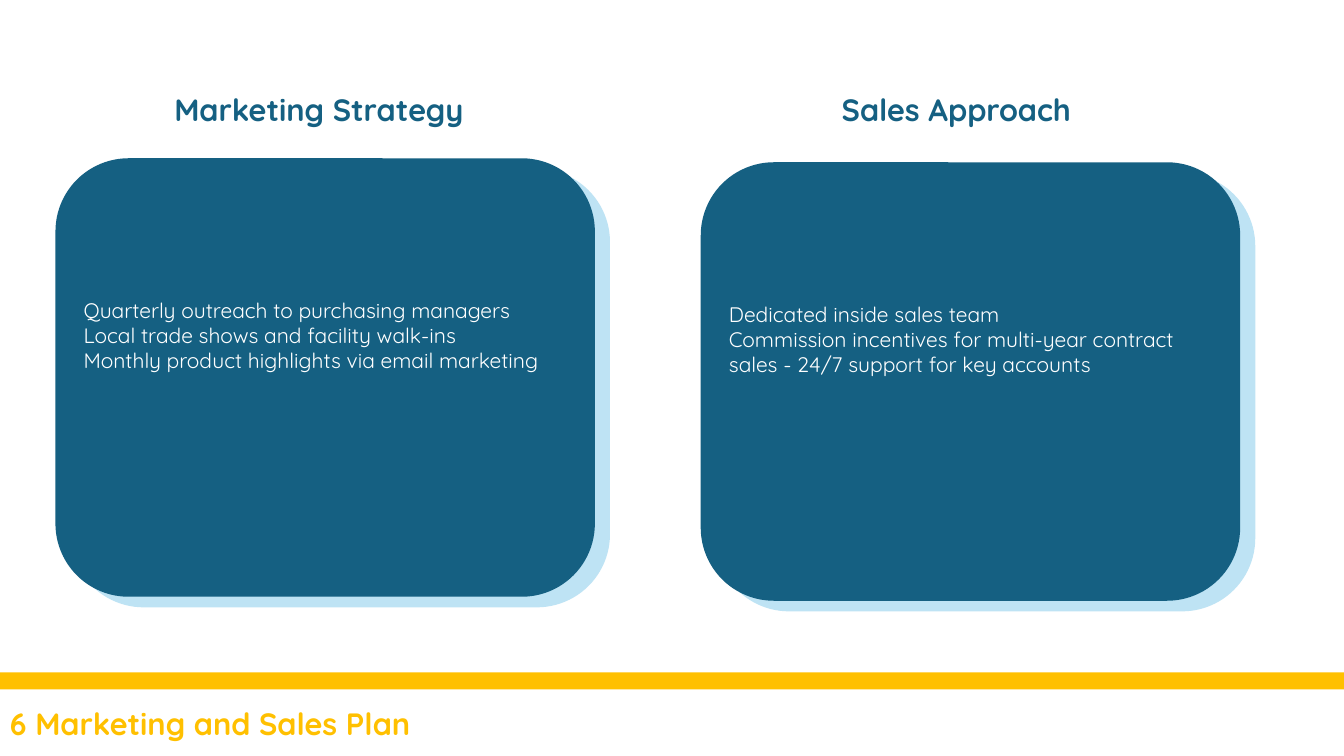
from collections import namedtuple
from dataclasses import dataclass

from pptx import Presentation
from pptx.dml.color import RGBColor
from pptx.enum.shapes import MSO_SHAPE
from pptx.util import Inches, Pt

Box = namedtuple("Box", "left top width height")


@dataclass(frozen=True)
class Theme:
    font: str = "Quicksand"
    blue: str = "156082"
    pale_blue: str = "BEE3F4"
    gold: str = "FFC000"
    white: str = "FFFFFF"
    heading_size: int = 22
    body_size: int = 15


THEME = Theme()
SLIDE = Box(0, 0, 13.33, 7.5)
HEADING_HEIGHT = 0.47


def add_block(page, kind, box, color):
    """Add a flat filled shape without outline."""
    block = page.shapes.add_shape(kind, *map(Inches, box))
    block.shadow.inherit = False
    block.fill.solid()
    block.fill.fore_color.rgb = RGBColor.from_string(color)
    block.line.fill.background()


def add_text(page, box, lines, *, size, color, bold=False):
    """Add a wrapped text box with one paragraph per line."""
    frame = page.shapes.add_textbox(*map(Inches, box)).text_frame
    frame.word_wrap = True
    for index, line in enumerate(lines):
        para = frame.paragraphs[0] if index == 0 else frame.add_paragraph()
        span = para.add_run()
        span.text = line
        span.font.name = THEME.font
        span.font.size = Pt(size)
        span.font.bold = bold
        span.font.color.rgb = RGBColor.from_string(color)


def add_card(page, box, lines, text_width):
    """Place a rounded card, its offset backing and its body text."""
    backing = box._replace(left=box.left + 0.15, top=box.top + 0.105)
    add_block(page, MSO_SHAPE.ROUNDED_RECTANGLE, backing, THEME.pale_blue)
    add_block(page, MSO_SHAPE.ROUNDED_RECTANGLE, box, THEME.blue)
    body = Box(box.left + 0.18, box.top + 1.33, text_width, 1.36)
    add_text(page, body, lines, size=THEME.body_size, color=THEME.white)


def add_heading(page, box, text, color):
    """Place a bold heading."""
    add_text(page, box, [text], size=THEME.heading_size, color=color, bold=True)


def add_footer(page, box, title):
    """Place the gold rule and the section title below it."""
    rule = box._replace(height=0.17)
    add_block(page, MSO_SHAPE.RECTANGLE, rule, THEME.gold)
    title_box = Box(box.left, box.top + 0.27, 9.17, HEADING_HEIGHT)
    add_heading(page, title_box, title, THEME.gold)


# Each column: heading, heading box, card box, body width, body lines
COLUMNS = [
    ("Marketing Strategy", Box(1.63, 0.85, 3.19, HEADING_HEIGHT),
     Box(0.55, 1.57, 5.35, 4.35), 4.91,
     ["Quarterly outreach to purchasing managers",
      "Local trade shows and facility walk-ins",
      "Monthly product highlights via email marketing"]),
    ("Sales Approach", Box(8.25, 0.85, 2.67, HEADING_HEIGHT),
     Box(6.95, 1.61, 5.35, 4.35), 4.79,
     ["Dedicated inside sales team",
      "Commission incentives for multi-year contract sales"
      " - 24/7 support for key accounts"]),
]


def main():
    deck = Presentation()
    deck.slide_width = Inches(SLIDE.width)
    deck.slide_height = Inches(SLIDE.height)
    page = deck.slides.add_slide(deck.slide_layouts[6])

    # Footer band
    add_footer(page, Box(0, 6.67, SLIDE.width, 0.83), "6 Marketing and Sales Plan")

    # Two columns of heading and card
    for heading, heading_box, card_box, text_width, lines in COLUMNS:
        add_heading(page, heading_box, heading, THEME.blue)
        add_card(page, card_box, lines, text_width)

    deck.save("out.pptx")


if __name__ == "__main__":
    main()
